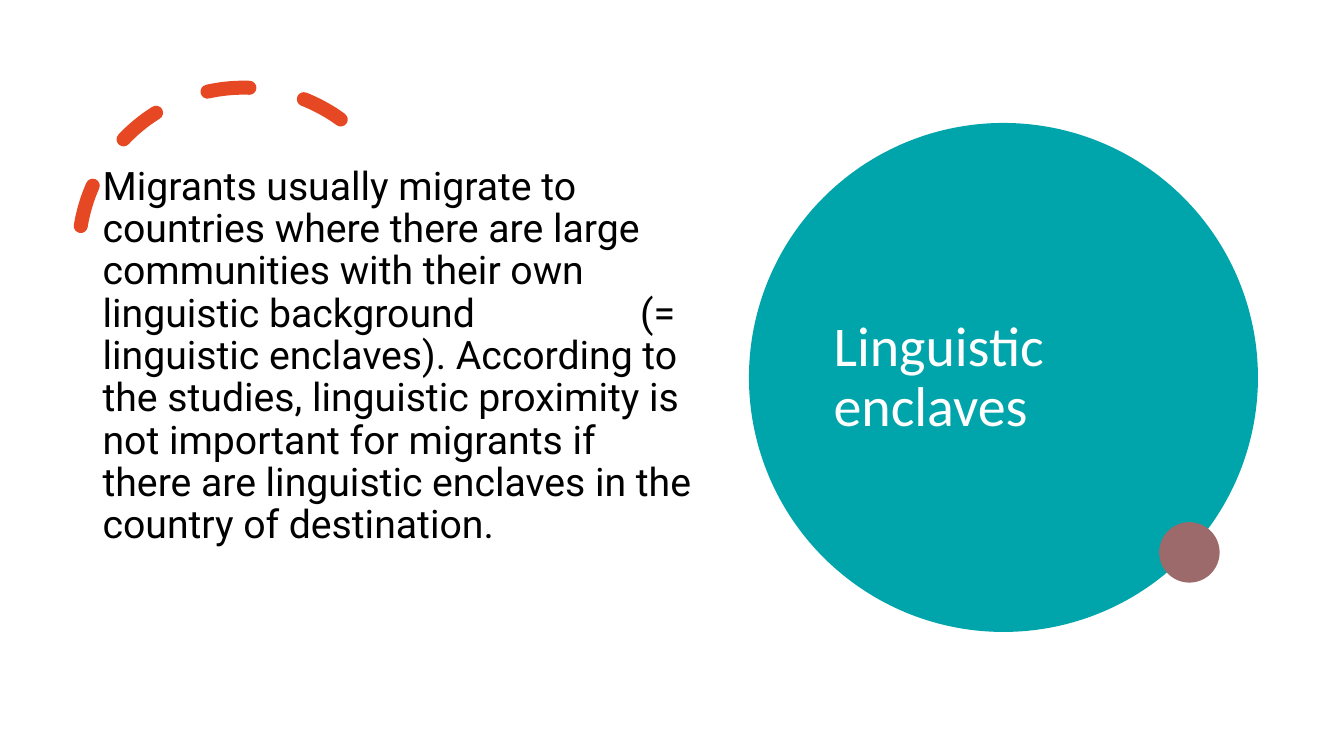
from dataclasses import dataclass

from lxml.etree import SubElement
from pptx import Presentation
from pptx.dml.color import RGBColor
from pptx.enum.dml import MSO_LINE
from pptx.enum.shapes import MSO_SHAPE
from pptx.enum.text import MSO_ANCHOR, PP_ALIGN
from pptx.oxml.ns import qn
from pptx.shapes.autoshape import Shape
from pptx.slide import Slide
from pptx.util import Inches, Pt

SLIDE_WIDTH = Inches(13.333)
SLIDE_HEIGHT = Inches(7.5)

TEAL = RGBColor(0x00, 0xA5, 0xAB)
MAUVE = RGBColor(0x9C, 0x6A, 0x6A)
ORANGE = RGBColor(0xE6, 0x48, 0x23)
WHITE = RGBColor(0xFF, 0xFF, 0xFF)
BLACK = RGBColor(0x00, 0x00, 0x00)


def across(percent: float) -> int:
    """Percentage of the slide's width."""
    return round(SLIDE_WIDTH * percent / 100)


def down(percent: float) -> int:
    """Percentage of the slide's height."""
    return round(SLIDE_HEIGHT * percent / 100)


@dataclass(frozen=True)
class Round:
    """A circular outline; the diameter is a percentage of the height."""
    left: float
    top: float
    diameter: float
    color: RGBColor


@dataclass(frozen=True)
class Passage:
    left: float
    top: float
    width: float
    height: float
    words: str
    font_name: str
    size: int
    color: RGBColor
    anchor: MSO_ANCHOR
    tab_stop: float = 0


DASHED_ARC = Round(5.85, 11.6, 43.6, ORANGE)
TITLE_DISC = Round(55.73, 16.27, 67.33, TEAL)
ACCENT_DISC = Round(86.25, 69.07, 8, MAUVE)

TITLE = Passage(61.28, 20.4, 26.55, 59.33, "Linguistic enclaves",
                "Calibri", 40, WHITE, MSO_ANCHOR.MIDDLE)
EXPLANATION = Passage(
    6.9, 21.33, 45.38, 57.33,
    "Migrants usually migrate to countries where there are large "
    "communities with their own linguistic background\t(= linguistic "
    "enclaves). According to the studies, linguistic proximity is not "
    "important for migrants if there are linguistic enclaves in the "
    "country of destination.",
    "Roboto", 28, BLACK, MSO_ANCHOR.TOP, tab_stop=40)


def add_round(slide: Slide, kind: MSO_SHAPE, outline: Round) -> Shape:
    side = down(outline.diameter)
    shape = slide.shapes.add_shape(
        kind, across(outline.left), down(outline.top), side, side)
    shape.shadow.inherit = False
    return shape


def add_disc(slide: Slide, outline: Round) -> None:
    disc = add_round(slide, MSO_SHAPE.OVAL, outline)
    disc.fill.solid()
    disc.fill.fore_color.rgb = outline.color
    disc.line.fill.background()


def add_dashed_arc(slide: Slide, outline: Round) -> None:
    arc = add_round(slide, MSO_SHAPE.ARC, outline)
    arc.adjustments[0] = 158.17
    arc.adjustments[1] = 17.81
    arc.rotation = 29.8
    arc.fill.background()
    arc.line.color.rgb = outline.color
    arc.line.width = Pt(10)
    arc.line.dash_style = MSO_LINE.DASH
    properties = arc.element.spPr
    properties.find(qn("a:xfrm")).set("flipH", "1")
    properties.find(qn("a:ln")).set("cap", "rnd")


def add_passage(slide: Slide, passage: Passage) -> None:
    box = slide.shapes.add_textbox(
        across(passage.left), down(passage.top),
        across(passage.width), down(passage.height))
    frame = box.text_frame
    frame.word_wrap = True
    frame.vertical_anchor = passage.anchor
    paragraph = frame.paragraphs[0]
    paragraph.text = passage.words
    paragraph.alignment = PP_ALIGN.LEFT
    paragraph.line_spacing = 0.9
    if passage.tab_stop:
        stops = SubElement(paragraph._p.get_or_add_pPr(), qn("a:tabLst"))
        SubElement(stops, qn("a:tab"),
                   pos=str(across(passage.tab_stop)), algn="l")
    paragraph.font.name = passage.font_name
    paragraph.font.size = Pt(passage.size)
    paragraph.font.color.rgb = passage.color


def main() -> None:
    presentation = Presentation()
    presentation.slide_width = SLIDE_WIDTH
    presentation.slide_height = SLIDE_HEIGHT
    slide = presentation.slides.add_slide(presentation.slide_layouts[6])
    slide.background.fill.solid()
    slide.background.fill.fore_color.rgb = WHITE

    add_dashed_arc(slide, DASHED_ARC)
    add_disc(slide, TITLE_DISC)
    for passage in (TITLE, EXPLANATION):
        add_passage(slide, passage)
    add_disc(slide, ACCENT_DISC)

    presentation.save("out.pptx")


if __name__ == "__main__":
    main()
